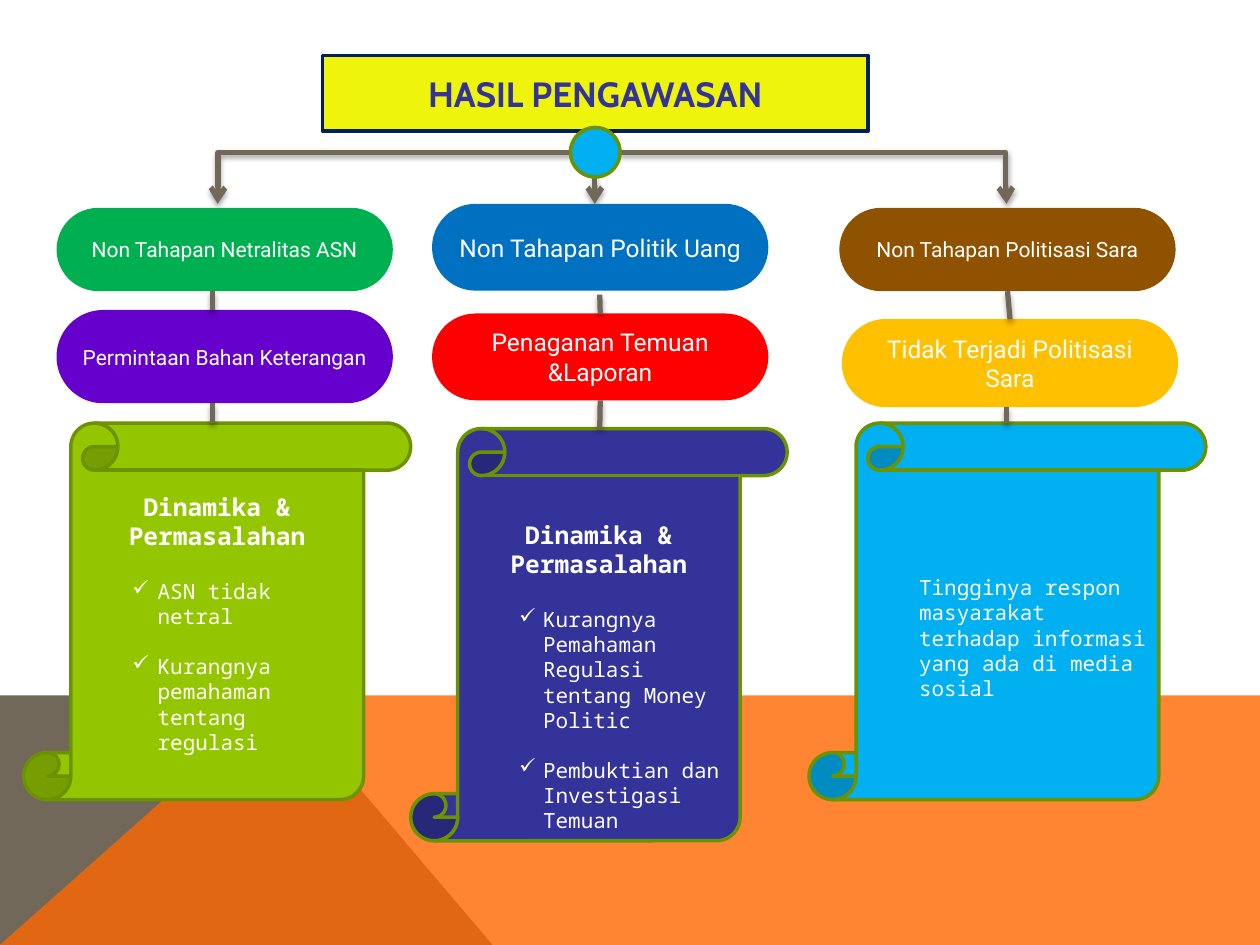
from lxml import etree
from pptx import Presentation
from pptx.dml.color import RGBColor
from pptx.enum import shapes, text
from pptx.oxml import ns
from pptx.util import Cm, Pt

COLORS = {
    "white": "FFFFFF", "taupe": "71685A", "orange": "FF6700",
    "lime": "94C600", "olive": "6D9200", "indigo": "333399", "sky": "00B0F0",
    "yellow": "EEF40C", "navy": "002060", "green": "00B050", "purple": "6600CC",
    "blue": "0070C0", "red": "FF0000", "brown": "8F5201", "amber": "FFC000",
}
PILL_WIDTH = 6.78
HEADING = "Dinamika & Permasalahan"

# Pills: left, top, height, color, size, wording.
# Scrolls: left, top, width, height, color, top inset, heading, items, indent, hanging.
COLUMNS = [
    {"upper": (1.14, 4.19, 1.68, "green", 12, "Non Tahapan Netralitas ASN"),
     "lower": (1.14, 6.25, 1.88, "purple", 12, "Permintaan Bahan Keterangan"),
     "scroll": (0.48, 8.53, 7.8, 7.59, "lime", 0.44, HEADING,
                ["ASN tidak netral", "Kurangnya pemahaman tentang regulasi"],
                1.5, 0.51),
     "axis": 4.29, "link_top": 5.87, "joins": ()},
    {"upper": (8.71, 4.11, 1.75, "blue", 14, "Non Tahapan Politik Uang"),
     "lower": (8.71, 6.32, 1.75, "red", 14, "Penaganan Temuan &Laporan"),
     "scroll": (8.28, 8.64, 7.59, 8.31, "indigo", 0.89, HEADING,
                ["Kurangnya Pemahaman Regulasi tentang Money Politic",
                 "Pembuktian dan Investigasi Temuan"], 1.47, 0.48),
     "axis": 12.09, "link_top": 5.94, "joins": ("lower top", "lower bottom")},
    {"upper": (16.92, 4.19, 1.68, "brown", 12, "Non Tahapan Politisasi Sara"),
     "lower": (16.97, 6.43, 1.78, "amber", 14, "Tidak Terjadi Politisasi Sara"),
     "scroll": (16.31, 8.53, 8.0, 7.59, "sky", 2.11, None,
                ["Tingginya respon masyarakat terhadap informasi yang ada di media sosial"],
                1.02, 0),
     "axis": 20.29, "link_top": 5.87, "joins": ("lower top", "upper bottom")},
]


def rgb(color):
    return RGBColor.from_string(COLORS[color])


def add_xml(parent, tag, **attributes):
    return etree.SubElement(parent, ns.qn(tag), attributes)


class Board:
    """Holds the current slide and the style of its elements."""

    def __init__(self, slide):
        self.slide = slide

    def paint(self, shape, fill, line=None):
        shape.fill.solid()
        shape.fill.fore_color.rgb = rgb(fill)
        if line:
            shape.line.color.rgb = rgb(line)
            shape.line.width = Pt(2)
        else:
            shape.line.fill.background()

    def shape(self, kind, box, fill, line=None):
        shape = self.slide.shapes.add_shape(kind, *map(Cm, box))
        shape.shadow.inherit = False
        self.paint(shape, fill, line)
        return shape

    def wording(self, paragraph, words, font, size, color="white", bold=False,
                align=text.PP_ALIGN.CENTER):
        paragraph.alignment = align
        run = paragraph.add_run()
        run.text = words
        for key, value in {"name": font, "size": Pt(size), "bold": bold}.items():
            setattr(run.font, key, value)
        run.font.color.rgb = rgb(color)

    def title(self, words, box):
        title = self.slide.shapes.title
        for key, value in zip(("left", "top", "width", "height"), box):
            setattr(title, key, Cm(value))
        self.paint(title, "yellow", "navy")
        frame = title.text_frame
        frame.auto_size = text.MSO_AUTO_SIZE.NONE
        frame.vertical_anchor = text.MSO_ANCHOR.MIDDLE
        self.wording(frame.paragraphs[0], words, "Cabin", 20, "indigo", True)

    def floor(self, points, fill, opacity=None):
        """Draw one flat polygon of the backdrop."""
        corners = [(Cm(x), Cm(y)) for x, y in points]
        builder = self.slide.shapes.build_freeform(*corners[0])
        builder.add_line_segments(corners[1:])
        polygon = builder.convert_to_shape()
        polygon.shadow.inherit = False
        self.paint(polygon, fill)
        if opacity:
            tint = polygon._element.spPr.find(".//" + ns.qn("a:srgbClr"))
            add_xml(tint, "a:alpha", val=str(opacity * 1000))

    def pill(self, left, top, height, fill, size, words):
        pill = self.shape(shapes.MSO_SHAPE.ROUNDED_RECTANGLE,
                          (left, top, PILL_WIDTH, height), fill)
        pill.adjustments[0] = 0.5
        frame = pill.text_frame
        frame.word_wrap = True
        frame.vertical_anchor = text.MSO_ANCHOR.MIDDLE
        self.wording(frame.paragraphs[0], words, "Roboto", size)
        return pill

    def scroll(self, left, top, width, height, fill, inset, heading, items,
               indent, hanging):
        scroll = self.shape(shapes.MSO_SHAPE.VERTICAL_SCROLL,
                            (left, top, width, height), fill, "olive")
        frame = scroll.text_frame
        frame.word_wrap = True
        frame.vertical_anchor = text.MSO_ANCHOR.TOP
        frame.margin_top = Cm(inset)
        paragraph = frame.paragraphs[0]
        if heading:
            self.wording(paragraph, heading, "Noto Sans Mono", 14, bold=True)
            paragraph.space_after = Pt(2)
        for index, item in enumerate(items):
            if heading or index:
                paragraph = frame.add_paragraph()
                paragraph.space_before = Pt(14)
            self.wording(paragraph, item, "Noto Sans Mono", 12,
                         align=text.PP_ALIGN.LEFT)
            properties = paragraph._p.get_or_add_pPr()
            properties.set("marL", str(Cm(indent)))
            properties.set("indent", str(-Cm(hanging)))
            if hanging:
                add_xml(properties, "a:buChar", char="✓")

    def connector(self, start, end, arrow=False, bend=None):
        kind = shapes.MSO_CONNECTOR.ELBOW if bend else shapes.MSO_CONNECTOR.STRAIGHT
        connector = self.slide.shapes.add_connector(kind, *map(Cm, start + end))
        connector.line.color.rgb = rgb("taupe")
        connector.line.width = Pt(3)
        properties = connector._element.spPr
        if arrow:
            add_xml(properties.find(ns.qn("a:ln")), "a:tailEnd", type="arrow")
        if bend:
            guides = properties.find(".//" + ns.qn("a:avLst"))
            add_xml(guides, "a:gd", name="adj1", fmla=f"val {bend}")
        shadow = add_xml(add_xml(properties, "a:effectLst"), "a:outerShdw",
                         blurRad=str(Pt(3.1)), dist=str(Pt(1.8)),
                         dir="5400000", rotWithShape="0")
        add_xml(add_xml(shadow, "a:srgbClr", val="000000"), "a:alpha", val="35000")
        return connector


def main():
    deck = Presentation()
    deck.slide_width, deck.slide_height = Cm(25.4), Cm(19.05)
    board = Board(deck.slides.add_slide(deck.slide_layouts[5]))

    horizon, bottom, ridge = 14.02, 19.05, 5.66
    board.floor([(0, bottom), (0, horizon), (ridge, horizon), (9.93, bottom)], "taupe")
    board.floor([(0, bottom), (ridge, horizon), (25.4, horizon), (25.4, bottom)],
                "orange", 80)
    board.title("HASIL PENGAWASAN", (6.5, 1.12, 11, 1.52))

    for column in COLUMNS:
        board.scroll(*column["scroll"])

    branch, arrow_tip = 3.07, 4.11
    board.connector((11.51, branch), (4.39, arrow_tip), True, 99900)
    board.connector((12.5, branch), (20.29, arrow_tip), True, 99800)
    board.connector((11.99, 3.58), (11.99, arrow_tip), True)
    board.shape(shapes.MSO_SHAPE.FLOWCHART_CONNECTOR, (11.5, 2.57, 1, 1),
                "sky", "olive")

    for column in COLUMNS:
        upper, lower = board.pill(*column["upper"]), board.pill(*column["lower"])
        axis, joins = column["axis"], column["joins"]
        lower_top, lower_height = column["lower"][1:3]
        link = board.connector((axis, lower_top), (axis, column["link_top"]))
        stem = board.connector((axis, column["scroll"][1]),
                               (axis, lower_top + lower_height))
        if "lower top" in joins:
            link.begin_connect(lower, 0)
        if "upper bottom" in joins:
            link.end_connect(upper, 2)
        if "lower bottom" in joins:
            stem.end_connect(lower, 2)

    deck.save("out.pptx")


if __name__ == "__main__":
    main()
